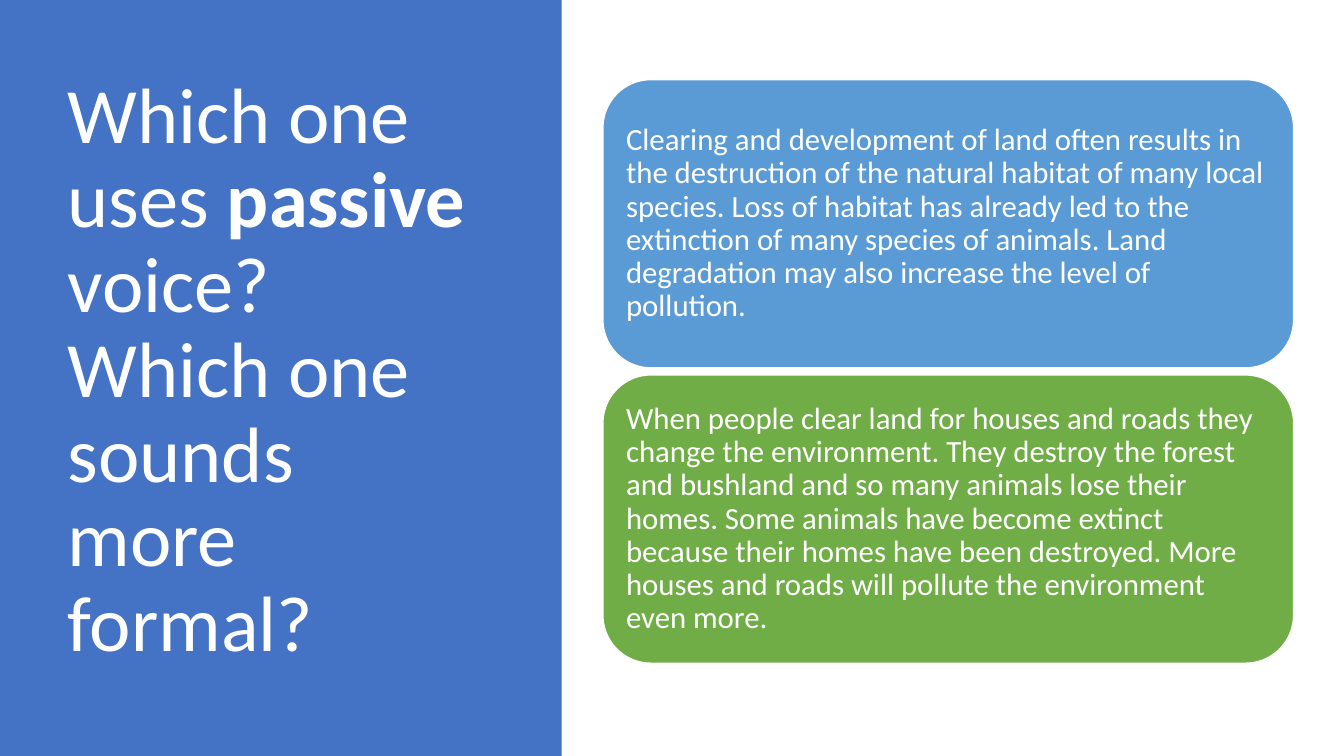
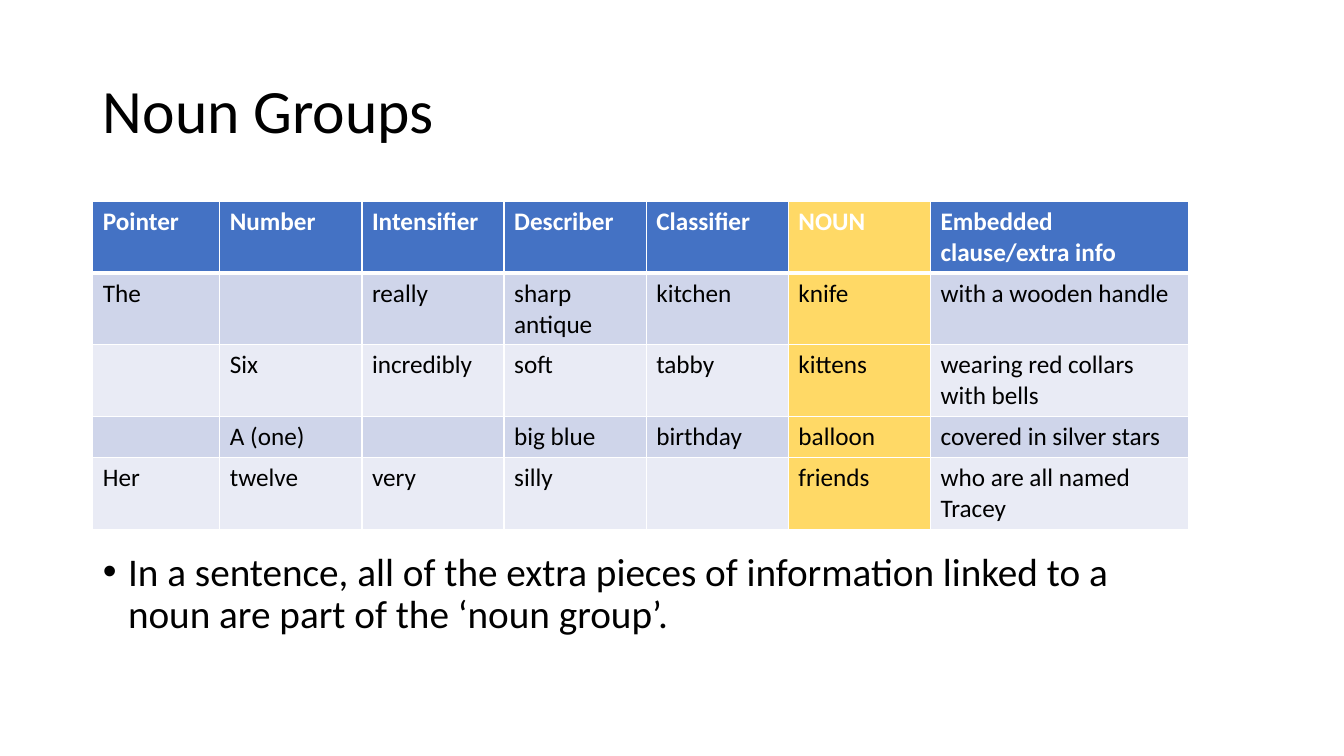
"""Build two grammar slides: passive voice and noun groups."""
from pptx import Presentation
from pptx.dml.color import RGBColor
from pptx.enum.shapes import MSO_SHAPE
from pptx.enum.text import MSO_ANCHOR, MSO_AUTO_SIZE, PP_ALIGN
from pptx.oxml.ns import qn
from pptx.util import Inches, Pt
from lxml import etree

RECT, ROUNDED = MSO_SHAPE.RECTANGLE, MSO_SHAPE.ROUNDED_RECTANGLE
TOP, MIDDLE = MSO_ANCHOR.TOP, MSO_ANCHOR.MIDDLE
NO_FIT, LEFT = MSO_AUTO_SIZE.NONE, PP_ALIGN.LEFT

WHITE = RGBColor(0xFF, 0xFF, 0xFF)
BLACK = RGBColor(0x00, 0x00, 0x00)
BLUE = RGBColor(0x44, 0x72, 0xC4)
SKY = RGBColor(0x5B, 0x9B, 0xD5)
GREEN = RGBColor(0x70, 0xAD, 0x47)
GOLD = RGBColor(0xFF, 0xD9, 0x66)
BANDS = (RGBColor(0xCF, 0xD5, 0xEA), RGBColor(0xE9, 0xEB, 0xF5))
FONT = "Calibri"

QUESTIONS = [
    [("Which one uses ", False), ("passive", True), (" voice?", False)],
    [("Which one sounds more formal?", False)],
]
SAMPLES = [
    (SKY, "Clearing and development of land often results in the destruction of the "
          "natural habitat of many local species. Loss of habitat has already led to the "
          "extinction of many species of animals. Land degradation may also increase the "
          "level of pollution."),
    (GREEN, "When people clear land for houses and roads they change the environment. They "
            "destroy the forest and bushland and so many animals lose their homes. Some "
            "animals have become extinct because their homes have been destroyed. More "
            "houses and roads will pollute the environment even more."),
]
NOUN_TITLE = "Noun Groups"
NOUN_ROWS = [
    ("Pointer", "Number", "Intensifier", "Describer", "Classifier", "NOUN",
     "Embedded clause/extra info"),
    ("The", "", "really", "sharp antique", "kitchen", "knife", "with a wooden handle"),
    ("", "Six", "incredibly", "soft", "tabby", "kittens", "wearing red collars with bells"),
    ("", "A (one)", "", "big blue", "birthday", "balloon", "covered in silver stars"),
    ("Her", "twelve", "very", "silly", "", "friends", "who are all named Tracey"),
]
NOUN_COLUMN = 5
COLUMN_WIDTHS = [1.26] + [1.41] * 5 + [2.56]
ROW_HEIGHTS = [0.7, 0.7, 0.7, 0.41, 0.7]
NOUN_NOTE = ("In a sentence, all of the extra pieces of information linked to a noun are "
             "part of the ‘noun group’.")


def place(shape, left, top, width, height):
    shape.left, shape.top = Inches(left), Inches(top)
    shape.width, shape.height = Inches(width), Inches(height)


def style(p, size, color, bold=None, spacing=0.9):
    p.alignment, p.line_spacing = LEFT, spacing
    p.font.name, p.font.size, p.font.bold = FONT, Pt(size), bold
    p.font.color.rgb = color


def format_frame(tf, anchor):
    tf.word_wrap, tf.auto_size, tf.vertical_anchor = True, NO_FIT, anchor


def set_title(s, lines, box, size, color):
    title = s.shapes.title
    place(title, *box)
    format_frame(title.text_frame, MIDDLE)
    p = title.text_frame.paragraphs[0]
    style(p, size, color)
    for i, line in enumerate(lines):
        if i:
            p.add_line_break()
        for text, bold in line:
            r = p.add_run()
            r.text = text
            if bold:
                r.font.bold = True


def add_block(s, kind, box, fill):
    shape = s.shapes.add_shape(kind, *map(Inches, box))
    shape.shadow.inherit = False
    shape.fill.solid()
    shape.fill.fore_color.rgb = fill
    shape.line.fill.background()
    return shape


def set_borders(cell, bottom):
    tcPr = cell._tc.get_or_add_tcPr()
    for side, width in (("L", 1), ("R", 1), ("T", 1), ("B", bottom)):
        ln = etree.SubElement(tcPr, qn(f"a:ln{side}"), w=str(Pt(width)))
        fill = etree.SubElement(ln, qn("a:solidFill"))
        etree.SubElement(fill, qn("a:srgbClr"), val=str(WHITE))


def set_bullet(p, indent):
    pPr = p._p.get_or_add_pPr()
    pPr.set("marL", str(Inches(indent)))
    pPr.set("indent", str(-Inches(indent)))


def build_voice_slide(prs):
    s = prs.slides.add_slide(prs.slide_layouts[5])
    set_title(s, QUESTIONS, (0.57, 0.68, 4.16, 6.02), 56, WHITE)
    panel = add_block(s, RECT, (0, 0, 5.57, 7.5), BLUE)
    s.shapes.title.element.addprevious(panel.element)
    height, gap = 2.86, 0.07
    for i, (color, text) in enumerate(SAMPLES):
        card = add_block(s, ROUNDED, (5.98, 0.79 + i * (height + gap), 6.85, height), color)
        card.line.color.rgb = WHITE
        card.line.width = Pt(1)
        tf = card.text_frame
        format_frame(tf, MIDDLE)
        tf.margin_left = tf.margin_right = tf.margin_top = tf.margin_bottom = Inches(0.09)
        tf.text = text
        style(tf.paragraphs[0], 22, WHITE)


def add_noun_table(s):
    box = (0.92, 2, sum(COLUMN_WIDTHS), sum(ROW_HEIGHTS))
    table = s.shapes.add_table(len(NOUN_ROWS), len(COLUMN_WIDTHS), *map(Inches, box)).table
    for column, width in zip(table.columns, COLUMN_WIDTHS):
        column.width = Inches(width)
    for row, height in zip(table.rows, ROW_HEIGHTS):
        row.height = Inches(height)
    for i, texts in enumerate(NOUN_ROWS):
        header = i == 0
        row_fill = BLUE if header else BANDS[(i - 1) % 2]
        for j, text in enumerate(texts):
            cell = table.cell(i, j)
            cell.text = text
            style(cell.text_frame.paragraphs[0], 18, WHITE if header else BLACK, header, 1.0)
            set_borders(cell, 3 if header else 1)
            cell.fill.solid()
            cell.fill.fore_color.rgb = GOLD if j == NOUN_COLUMN else row_fill


def build_noun_slide(prs):
    s = prs.slides.add_slide(prs.slide_layouts[1])
    set_title(s, [[(NOUN_TITLE, False)]], (0.92, 0.4, 11.5, 1.45), 44, BLACK)
    add_noun_table(s)
    body = s.placeholders[1]
    place(body, 0.92, 5.43, 10.86, 1.33)
    tf = body.text_frame
    format_frame(tf, TOP)
    tf.text = NOUN_NOTE
    p = tf.paragraphs[0]
    style(p, 28, BLACK)
    p.space_before = Pt(10)
    set_bullet(p, 0.25)


def main():
    prs = Presentation()
    prs.slide_width, prs.slide_height = Inches(13.33), Inches(7.5)
    build_voice_slide(prs)
    build_noun_slide(prs)
    prs.save("out.pptx")


if __name__ == "__main__":
    main()
